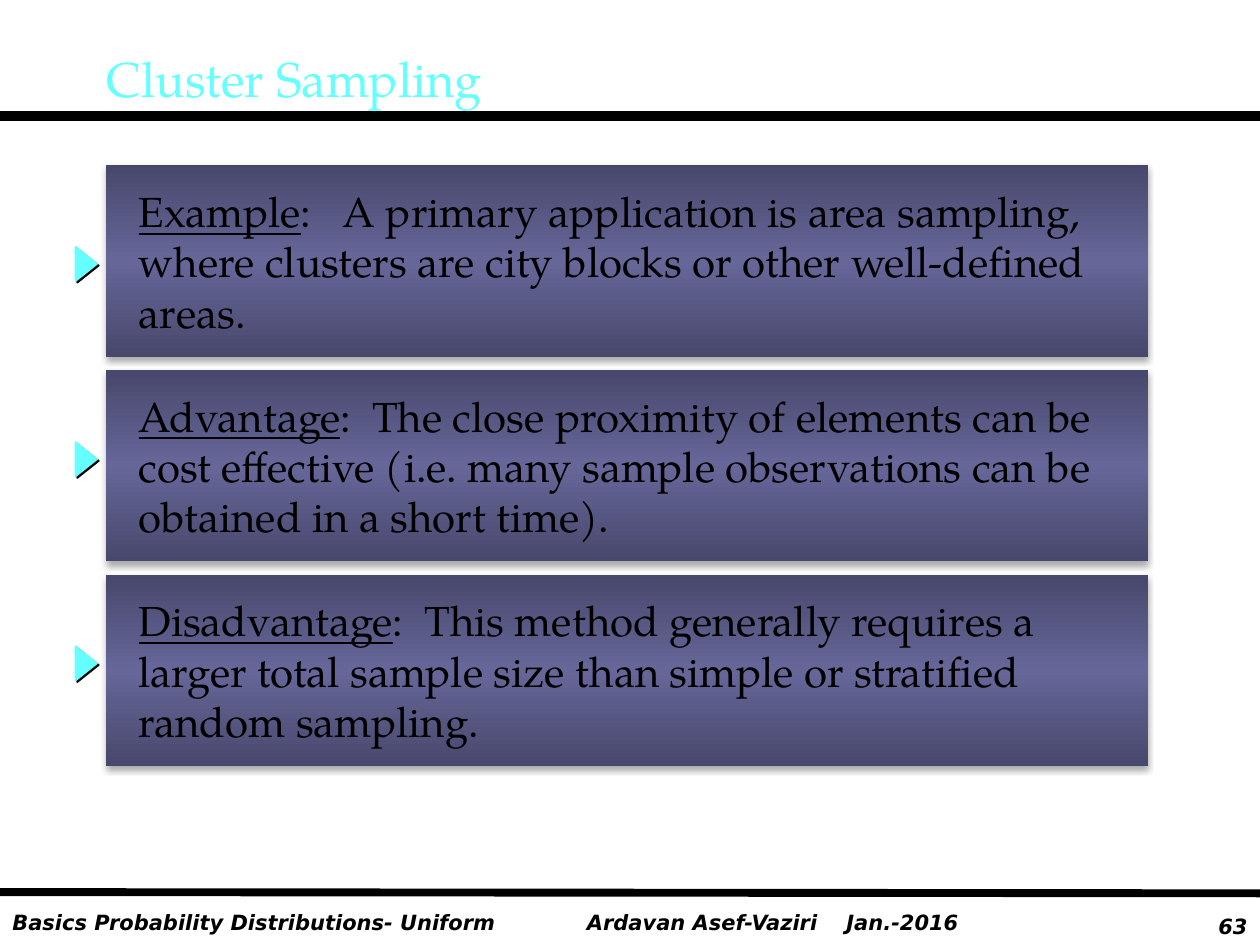
from lxml import etree
from pptx import Presentation
from pptx.dml.color import RGBColor
from pptx.enum.shapes import MSO_CONNECTOR as Connector, MSO_SHAPE as Shape
from pptx.enum.text import MSO_ANCHOR as Anchor, PP_ALIGN as Align
from pptx.oxml import parse_xml
from pptx.oxml.ns import nsdecls, qn
from pptx.util import Inches, Pt

COLORS = {"ink": "000000", "aqua": "66FFFF", "violet": "666699"}
SERIF, SANS = "TeX Gyre Pagella", "DejaVu Sans"


def add_run(paragraph, text, size, font, color="ink", **styles):
    run = paragraph.add_run()
    run.text = text
    run.font.size = Pt(size)
    run.font.name = font
    run.font.color.rgb = RGBColor.from_string(COLORS[color])
    for style, value in styles.items():
        setattr(run.font, style, value)


def add_shadow(shape, alpha, blur, distance, angle):
    shape.shadow.inherit = False
    effects = shape._element.spPr.find(qn("a:effectLst"))
    effects.append(parse_xml(
        f'<a:outerShdw {nsdecls("a")} blurRad="{Pt(blur)}" dist="{Pt(distance)}" '
        f'dir="{angle * 60000}" algn="ctr" rotWithShape="0">'
        f'<a:srgbClr val="{COLORS["ink"]}"><a:alpha val="{alpha * 1000}"/></a:srgbClr>'
        '</a:outerShdw>'))


prs = Presentation()
prs.slide_width, prs.slide_height = Inches(10), Inches(7.5)
slide = prs.slides.add_slide(prs.slide_layouts[6])

footers = [
    (9.25, 7.2, 0.75, Align.RIGHT, "63"),
    (4.56, 7.17, 3.35, Align.LEFT, "Ardavan Asef-Vaziri    Jan.-2016"),
    (0, 7.17, 4.67, Align.LEFT, "Basics Probability Distributions- Uniform"),
]
for left, top, width, align, text in footers:
    footer = slide.shapes.add_textbox(Inches(left), Inches(top), Inches(width), Inches(0.3))
    footer.text_frame.word_wrap = True
    line = footer.text_frame.paragraphs[0]
    line.alignment = align
    add_run(line, text, 12, SANS, bold=True, italic=True)

for start, end, weight in [(0.92, 0.92, 6), (7.08, 7.09, 4.5)]:
    rule = slide.shapes.add_connector(
        Connector.STRAIGHT, Inches(0), Inches(start), Inches(10), Inches(end))
    rule.line.color.rgb = RGBColor.from_string(COLORS["ink"])
    rule.line.width = Pt(weight)
    etree.SubElement(rule._element.spPr, qn("a:effectLst"))

title = slide.shapes.add_textbox(Inches(0.75), Inches(0.2), Inches(8.5), Inches(0.83))
title.text_frame.word_wrap = True
title.text_frame.vertical_anchor = Anchor.MIDDLE
add_run(title.text_frame.paragraphs[0], "Cluster Sampling", 28, SERIF, "aqua")

points = [
    (2.01, "Example", [":   A primary application is area sampling,",
                       "where clusters are city blocks or other well-defined",
                       "areas."]),
    (3.56, "Advantage", [":  The close proximity of elements can be",
                         "cost effective (i.e. many sample observations can be",
                         "obtained in a short time)."]),
    (5.18, "Disadvantage", [":  This method generally requires a",
                            "larger total sample size than simple or stratified",
                            "random sampling."]),
]
for row, (marker_top, heading, lines) in enumerate(points):
    panel = slide.shapes.add_shape(
        Shape.RECTANGLE, Inches(0.84), Inches(1.31 + row * 1.625), Inches(8.27), Inches(1.52))
    violet = COLORS["violet"]
    edge = f'<a:srgbClr val="{violet}"><a:shade val="46275"/></a:srgbClr>'
    panel._element.spPr.find(qn("a:prstGeom")).addnext(parse_xml(
        f'<a:gradFill {nsdecls("a")} rotWithShape="1"><a:gsLst>'
        f'<a:gs pos="0">{edge}</a:gs>'
        f'<a:gs pos="50000"><a:srgbClr val="{violet}"/></a:gs>'
        f'<a:gs pos="100000">{edge}</a:gs>'
        '</a:gsLst><a:lin ang="5400000" scaled="1"/></a:gradFill>'))
    panel.line.fill.background()
    add_shadow(panel, 32, 3.5, 2.2, 90)

    body = panel.text_frame
    body.word_wrap = True
    body.vertical_anchor = Anchor.MIDDLE
    body.margin_left = Inches(0.26)
    for index, text in enumerate(lines):
        paragraph = body.add_paragraph() if index else body.paragraphs[0]
        paragraph.alignment = Align.LEFT
        if index == 0:
            add_run(paragraph, heading, 24, SERIF, underline=True)
        add_run(paragraph, text, 24, SERIF)

    marker = slide.shapes.add_shape(
        Shape.ISOSCELES_TRIANGLE, Inches(0.55), Inches(marker_top), Inches(0.27), Inches(0.17))
    marker.rotation = 90
    marker.fill.solid()
    marker.fill.fore_color.rgb = RGBColor.from_string(COLORS["aqua"])
    marker.line.color.rgb = RGBColor.from_string(COLORS["aqua"])
    marker.line.width = Pt(1)
    add_shadow(marker, 100, 0, 1.4, 45)

prs.save("out.pptx")
